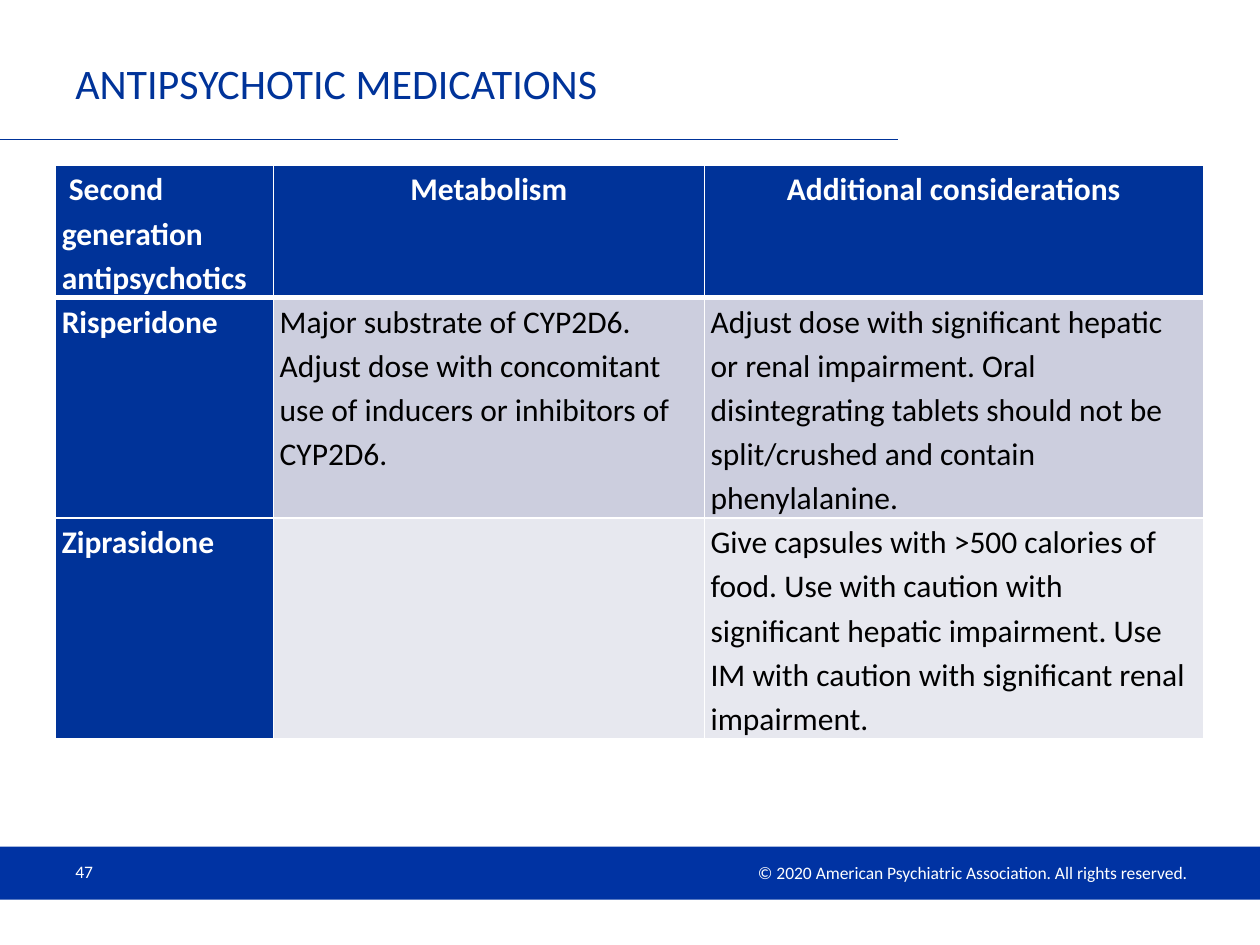
from dataclasses import dataclass

from lxml import etree
from pptx import Presentation
from pptx.dml.color import RGBColor
from pptx.enum.shapes import MSO_CONNECTOR, MSO_SHAPE
from pptx.enum.text import MSO_ANCHOR, PP_ALIGN
from pptx.oxml.ns import qn
from pptx.util import Inches, Pt

LEFT, CENTER, RIGHT = PP_ALIGN.LEFT, PP_ALIGN.CENTER, PP_ALIGN.RIGHT
MIDDLE = MSO_ANCHOR.MIDDLE

TITLE = "ANTIPSYCHOTIC MEDICATIONS"
PAGE_NUMBER = "47"
COPYRIGHT = "© 2020 American Psychiatric Association. All rights reserved. "
TABLE_ROWS = [
    (" Second generation antipsychotics", "Metabolism", "Additional considerations"),
    ("Risperidone",
     "Major substrate of CYP2D6. Adjust dose with concomitant use of inducers "
     "or inhibitors of CYP2D6.",
     "Adjust dose with significant hepatic or renal impairment. Oral disintegrating "
     "tablets should not be split/crushed and contain phenylalanine."),
    ("Ziprasidone",
     "",
     "Give capsules with >500 calories of food. Use with caution with significant "
     "hepatic impairment. Use IM with caution with significant renal impairment."),
]


@dataclass(frozen=True)
class Theme:
    font: str = "Calibri"
    navy: str = "003399"
    footer: str = "0033A3"
    white: str = "FFFFFF"
    ink: str = "000000"
    bands: tuple = ("CCCEDE", "E7E8EF")
    title_size: int = 24
    table_size: int = 18
    footer_size: int = 10
    thin: int = 1
    thick: int = 3


THEME = Theme()
SLIDE_WIDTH, SLIDE_HEIGHT = 10, 7.5
MARGIN = 0.5
RULE_WIDTH, RULE_TOP = 7.13, 1.11
FOOTER_TOP, FOOTER_HEIGHT = 6.72, 0.42
TABLE_LEFT, TABLE_TOP = 0.44, 1.31
COLUMN_WIDTHS = (1.73, 3.42, 3.96)
ROW_HEIGHTS = (1.05, 1.75, 1.75)


def write_text(frame, text, size, color, bold=False, align=LEFT):
    para = frame.paragraphs[0]
    para.alignment = align
    span = para.add_run()
    span.text = text
    span.font.name = THEME.font
    span.font.size = Pt(size)
    span.font.bold = bold
    span.font.color.rgb = RGBColor.from_string(color)
    return para


def add_text(page, place, text, **style):
    frame = page.shapes.add_textbox(*map(Inches, place)).text_frame
    frame.word_wrap = True
    frame.vertical_anchor = MIDDLE
    write_text(frame, text, **style)


def add_border(cell, side, width):
    properties = cell._tc.get_or_add_tcPr()
    line = etree.SubElement(properties, qn(f"a:ln{side}"), w=str(Pt(width)))
    fill = etree.SubElement(line, qn("a:solidFill"))
    etree.SubElement(fill, qn("a:srgbClr"), val=THEME.white)


def fill_cell(cell, text, row, column):
    header = row == 0
    label = header or column == 0
    for side in "LRTB":
        under_header = (row, side) in ((0, "B"), (1, "T"))
        add_border(cell, side, THEME.thick if under_header else THEME.thin)
    cell.fill.solid()
    fill = THEME.navy if label else THEME.bands[(row - 1) % len(THEME.bands)]
    cell.fill.fore_color.rgb = RGBColor.from_string(fill)
    cell.margin_left = cell.margin_right = Inches(0.05)
    cell.margin_top = cell.margin_bottom = 0
    if text:
        para = write_text(cell.text_frame, text, THEME.table_size,
                          THEME.white if label else THEME.ink, bold=label,
                          align=CENTER if header and column else LEFT)
        para.line_spacing = 1.15
        para.space_after = Pt(10)


def add_medication_table(page):
    place = (TABLE_LEFT, TABLE_TOP, sum(COLUMN_WIDTHS), sum(ROW_HEIGHTS))
    table = page.shapes.add_table(
        len(TABLE_ROWS), len(COLUMN_WIDTHS), *map(Inches, place)).table
    for column, width in zip(table.columns, COLUMN_WIDTHS):
        column.width = Inches(width)
    for row, height in zip(table.rows, ROW_HEIGHTS):
        row.height = Inches(height)
    for row, texts in enumerate(TABLE_ROWS):
        for column, text in enumerate(texts):
            fill_cell(table.cell(row, column), text, row, column)


def add_footer(page):
    bar = page.shapes.add_shape(MSO_SHAPE.RECTANGLE, *map(
        Inches, (0, FOOTER_TOP, SLIDE_WIDTH, FOOTER_HEIGHT)))
    bar.shadow.inherit = False
    bar.fill.solid()
    bar.fill.fore_color.rgb = RGBColor.from_string(THEME.footer)
    bar.line.fill.background()
    style = {"size": THEME.footer_size, "color": THEME.white}
    add_text(page, (5.18, 6.79, 4.37, 0.27), COPYRIGHT, align=RIGHT, **style)
    add_text(page, (MARGIN, FOOTER_TOP, 2.33, 0.4), PAGE_NUMBER, **style)


def add_title(page):
    rule = page.shapes.add_connector(MSO_CONNECTOR.STRAIGHT, *map(
        Inches, (0, RULE_TOP, RULE_WIDTH, RULE_TOP)))
    rule.line.color.rgb = RGBColor.from_string(THEME.navy)
    rule.line.width = Pt(0.75)
    etree.SubElement(rule._element.spPr, qn("a:effectLst"))
    add_text(page, (MARGIN, 0.34, RULE_WIDTH - MARGIN, 0.64), TITLE,
             size=THEME.title_size, color=THEME.navy)


def main():
    deck = Presentation()
    deck.slide_width, deck.slide_height = Inches(SLIDE_WIDTH), Inches(SLIDE_HEIGHT)
    page = deck.slides.add_slide(deck.slide_layouts[6])
    add_footer(page)
    add_title(page)
    add_medication_table(page)
    deck.save("out.pptx")


if __name__ == "__main__":
    main()
